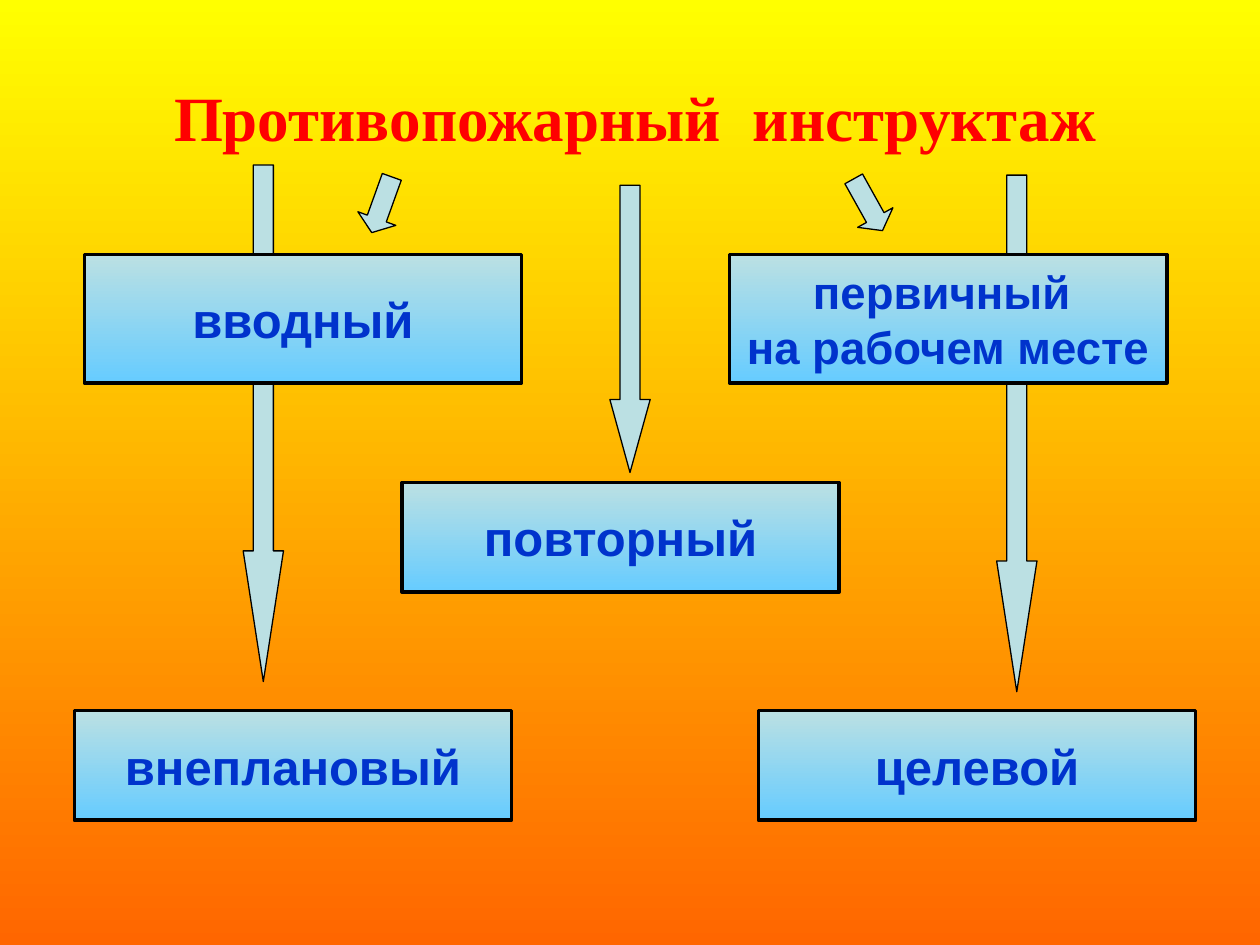
from pptx import Presentation
from pptx.dml.color import RGBColor
from pptx.enum.shapes import MSO_SHAPE as Shape
from pptx.enum.text import MSO_ANCHOR as Anchor, PP_ALIGN as Align
from pptx.util import Inches, Pt

BOX_WIDTH = 3.47
ARROW_WIDTH = 0.32
LONG_HEAD, MIDDLE_HEAD, SHORT_HEAD = 3.24, 1.81, 0.37


def rgb(value):
    return RGBColor.from_string(value)


def fill_gradient(fill, top_color, bottom_color):
    fill.gradient()
    fill.gradient_angle = 270
    for stop, color in zip(fill.gradient_stops, (top_color, bottom_color)):
        stop.color.rgb = rgb(color)


def set_outline(shape, width):
    shape.line.color.rgb = rgb("000000")
    shape.line.width = Pt(width)
    shape.shadow.inherit = False


def write_text(frame, text, font_name, size, color):
    frame.text = text
    frame.word_wrap = False
    for paragraph in frame.paragraphs:
        paragraph.alignment = Align.CENTER
        for run in paragraph.runs:
            run.font.name = font_name
            run.font.size = Pt(size)
            run.font.bold = True
            run.font.color.rgb = rgb(color)


def add_title(slide, text):
    title = slide.shapes.add_textbox(Inches(0.67), Inches(0.52), Inches(8.74), Inches(0.87))
    title.text_frame.margin_top = Inches(0.1)
    write_text(title.text_frame, text, "Times New Roman", 36, "FF0000")


def add_arrow(slide, left, top, height, head, rotation=0):
    arrow = slide.shapes.add_shape(
        Shape.DOWN_ARROW, Inches(left), Inches(top), Inches(ARROW_WIDTH), Inches(height))
    arrow.adjustments[0] = 0.5
    arrow.adjustments[1] = head
    arrow.rotation = rotation
    arrow.fill.solid()
    arrow.fill.fore_color.rgb = rgb("BBE0E3")
    set_outline(arrow, 0.75)


def add_briefing(slide, text, left, top, height=0.87, size=28):
    briefing = slide.shapes.add_shape(
        Shape.ACTION_BUTTON_CUSTOM, Inches(left), Inches(top), Inches(BOX_WIDTH), Inches(height))
    fill_gradient(briefing.fill, "BBE0E3", "66CCFF")
    set_outline(briefing, 2)
    briefing.text_frame.vertical_anchor = Anchor.MIDDLE
    write_text(briefing.text_frame, text, "Arial", size, "0033CC")


def main():
    deck = Presentation()
    deck.slide_width, deck.slide_height = Inches(10), Inches(7.5)
    slide = deck.slides.add_slide(deck.slide_layouts[6])
    fill_gradient(slide.background.fill, "FFFF00", "FF6600")

    add_arrow(slide, 7.91, 1.39, 4.1, LONG_HEAD)
    add_arrow(slide, 1.93, 1.31, 4.1, LONG_HEAD)
    add_title(slide, "Противопожарный  инструктаж")
    add_briefing(slide, "вводный", 0.67, 2.02, height=1.02)
    add_briefing(slide, "внеплановый", 0.59, 5.64)
    add_briefing(slide, "повторный", 3.19, 3.83)
    add_briefing(slide, "целевой", 6.02, 5.64)
    add_briefing(slide, "первичный \nна рабочем месте", 5.79, 2.02, height=1.02, size=26)
    add_arrow(slide, 2.87, 1.39, 0.47, SHORT_HEAD, rotation=19.8)
    add_arrow(slide, 6.73, 1.39, 0.47, SHORT_HEAD, rotation=330.9)
    add_arrow(slide, 4.84, 1.47, 2.28, MIDDLE_HEAD)

    deck.save("out.pptx")


if __name__ == "__main__":
    main()
